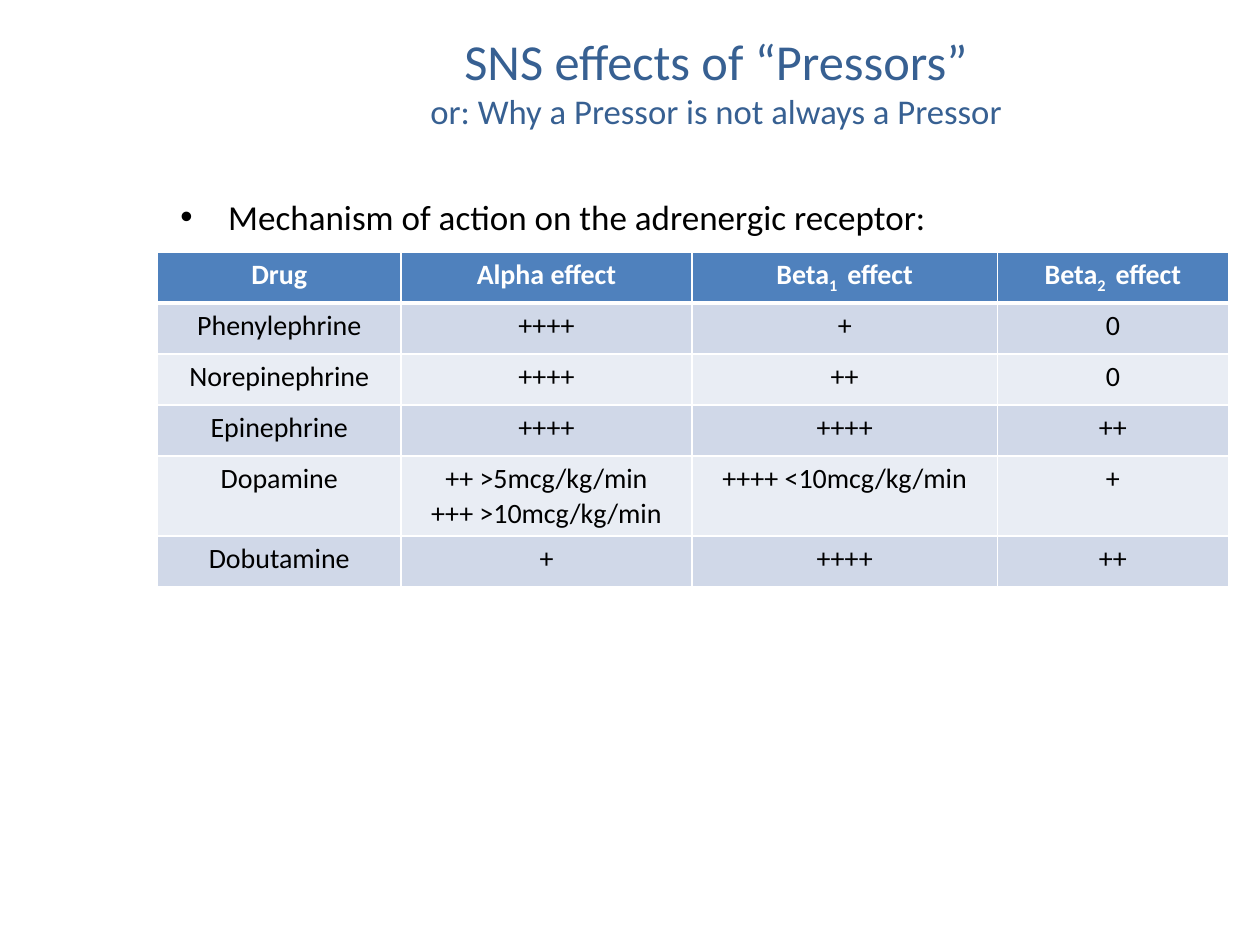
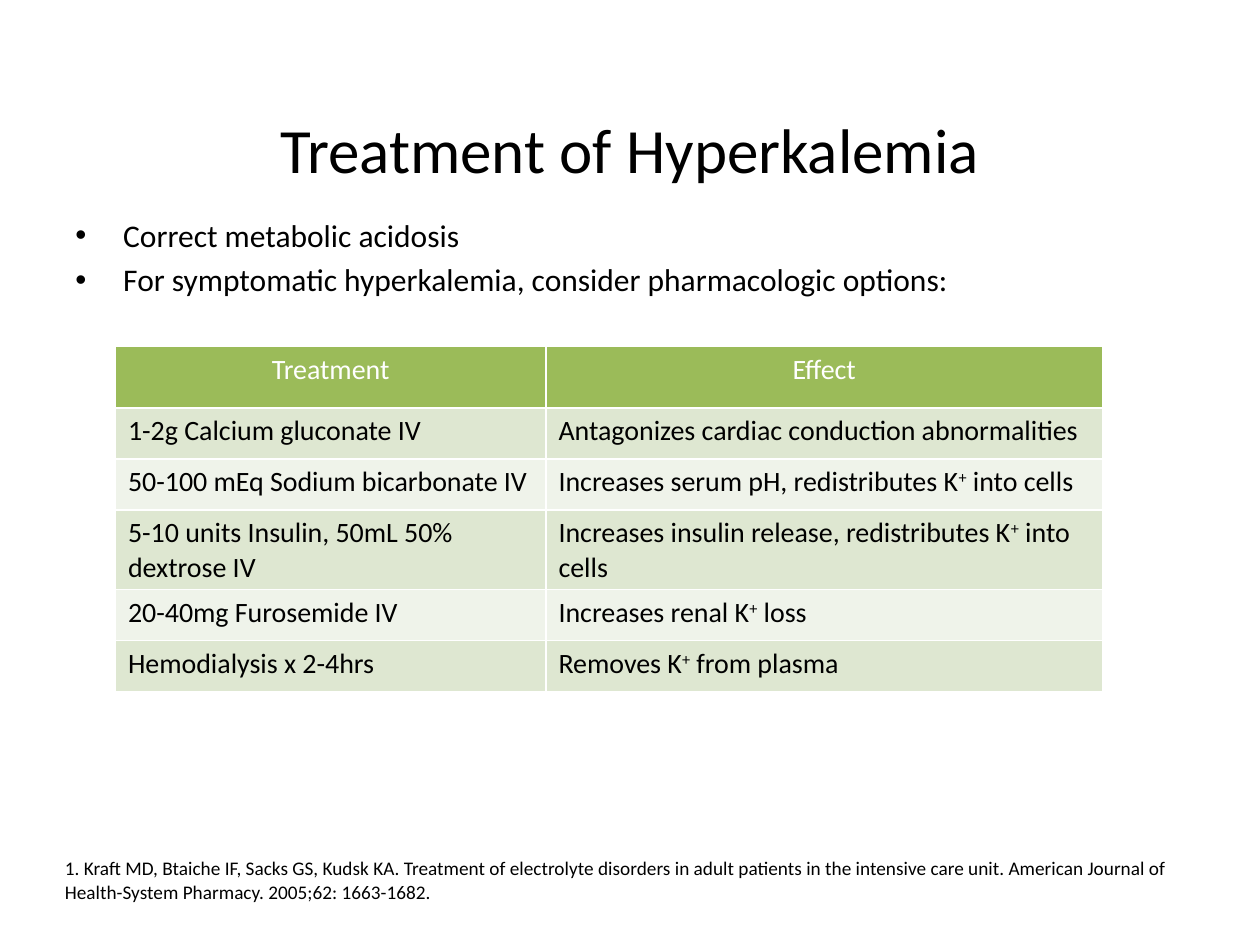
from dataclasses import dataclass
from typing import NamedTuple

from lxml.etree import SubElement
from pptx import Presentation
from pptx.dml.color import RGBColor
from pptx.enum.text import MSO_ANCHOR, PP_ALIGN
from pptx.oxml.ns import qn
from pptx.util import Emu, Inches, Pt

COLUMNS, ROWS = 120, 90
PAGE_WIDTH, PAGE_HEIGHT = Inches(10), Inches(7.5)


@dataclass(frozen=True)
class Theme:
    """Colours and type sizes shared by the slides."""
    font: str = "Calibri"
    ink: str = "000000"
    paper: str = "FFFFFF"
    accent: str = "376092"
    blue: tuple[str, ...] = ("4F81BD", "D0D8E8", "E9EDF4")
    green: tuple[str, ...] = ("9BBB59", "DEE7D1", "EFF3EA")
    title: float = 36
    long_title: float = 28.8
    subtitle: float = 19.8
    lead_point: float = 20
    point: float = 18
    cell: float = 16
    citation: float = 11
    grid_line: float = 1
    heavy_line: float = 3


THEME = Theme()


class Area(NamedTuple):
    """A place on the grid, in columns and rows."""
    left: float
    top: float
    width: float
    height: float


class Span(NamedTuple):
    """A stretch of text with its baseline shift in percent."""
    text: str
    shift: int = 0


class TitleLine(NamedTuple):
    """One line of a title with its type size."""
    text: str
    size: float


Entry = str | tuple[Span, ...]


@dataclass(frozen=True)
class Title:
    """A centred heading."""
    area: Area
    lines: tuple[TitleLine, ...]
    color: str


@dataclass(frozen=True)
class Points:
    """A bulleted list."""
    area: Area
    texts: tuple[str, ...]
    size: float


@dataclass(frozen=True)
class Grid:
    """A table with a coloured heading and banded rows."""
    left: float
    top: float
    widths: tuple[float, ...]
    heading_height: float
    row_height: float
    palette: tuple[str, ...]
    entries: tuple[tuple[Entry, ...], ...]
    bold_heading: bool
    body_align: PP_ALIGN
    heading_rule: float


def across(columns: float) -> Emu:
    """Turn grid columns into a length."""
    return Emu(round(PAGE_WIDTH * columns / COLUMNS))


def down(rows: float) -> Emu:
    """Turn grid rows into a length."""
    return Emu(round(PAGE_HEIGHT * rows / ROWS))


def style(font, size: float, color: str, bold: bool = False) -> None:
    """Set face, size, colour and weight."""
    font.name = THEME.font
    font.size = Pt(size)
    font.bold = bold
    font.color.rgb = RGBColor.from_string(color)


def add_frame(slide, area: Area):
    """Add a wrapping text frame."""
    frame = slide.shapes.add_textbox(across(area.left), down(area.top),
                                     across(area.width), down(area.height)).text_frame
    frame.word_wrap = True
    return frame


def paragraphs(frame, count: int):
    """Return the given number of paragraphs, starting with the first."""
    return [frame.paragraphs[0], *(frame.add_paragraph() for _ in range(count - 1))]


def draw_title(slide, title: Title) -> None:
    """Draw a heading of one or more lines."""
    frame = add_frame(slide, title.area)
    frame.vertical_anchor = MSO_ANCHOR.MIDDLE
    heading = frame.paragraphs[0]
    heading.alignment = PP_ALIGN.CENTER
    for index, line in enumerate(title.lines):
        if index:
            heading.add_line_break()
        run = heading.add_run()
        run.text = line.text
        style(run.font, line.size, title.color)


def draw_points(slide, points: Points) -> None:
    """Draw a bulleted list with hanging indents."""
    frame = add_frame(slide, points.area)
    hang = Inches(0.38)
    for index, (point, text) in enumerate(zip(paragraphs(frame, len(points.texts)), points.texts)):
        point.text = text
        properties = point._p.get_or_add_pPr()
        properties.set("marL", str(hang))
        properties.set("indent", str(-hang))
        SubElement(properties, qn("a:buFont"), typeface="Arial")
        SubElement(properties, qn("a:buChar"), char="•")
        if index:
            point.space_before = Pt(points.size * 0.2)
        style(point.font, points.size, THEME.ink)


def draw_citation(slide, area: Area, text: str) -> None:
    """Draw the reference at the foot of a slide."""
    reference = add_frame(slide, area).paragraphs[0]
    reference.text = text
    style(reference.font, THEME.citation, THEME.ink)


def rule_cell(cell, top: float, bottom: float) -> None:
    """Draw the four borders of a cell."""
    widths = {"lnL": THEME.grid_line, "lnR": THEME.grid_line, "lnT": top, "lnB": bottom}
    for side, width in widths.items():
        border = SubElement(cell._tc.get_or_add_tcPr(), qn(f"a:{side}"), w=str(Pt(width)))
        SubElement(SubElement(border, qn("a:solidFill")), qn("a:srgbClr"), val=THEME.paper)


def fill_cell(cell, entry: Entry, align: PP_ALIGN, color: str, bold: bool) -> None:
    """Write an entry, one paragraph for each line of a string."""
    lines = [(Span(text),) for text in entry.split("\n")] if isinstance(entry, str) else [entry]
    for paragraph, spans in zip(paragraphs(cell.text_frame, len(lines)), lines):
        paragraph.alignment = align
        for span in spans:
            run = paragraph.add_run()
            run.text = span.text
            if span.shift:
                run._r.get_or_add_rPr().set("baseline", str(span.shift * 1000))
        style(paragraph.font, THEME.cell, color, bold)
        for run in paragraph.runs:
            style(run.font, THEME.cell, color, bold)


def draw_grid(slide, grid: Grid) -> None:
    """Draw a table with its bands and rules."""
    count = len(grid.entries)
    height = grid.heading_height + grid.row_height * (count - 1)
    table = slide.shapes.add_table(count, len(grid.widths), across(grid.left), down(grid.top),
                                   across(sum(grid.widths)), down(height)).table
    for column, width in zip(table.columns, grid.widths):
        column.width = across(width)
    heading_fill, *bands = grid.palette
    for row, entries in enumerate(grid.entries):
        heading = row == 0
        table.rows[row].height = down(grid.heading_height if heading else grid.row_height)
        for column, entry in enumerate(entries):
            cell = table.cell(row, column)
            rule_cell(cell, grid.heading_rule if row == 1 else THEME.grid_line,
                      grid.heading_rule if heading else THEME.grid_line)
            cell.fill.solid()
            cell.fill.fore_color.rgb = RGBColor.from_string(
                heading_fill if heading else bands[(row - 1) % len(bands)])
            fill_cell(cell, entry, PP_ALIGN.CENTER if heading else grid.body_align,
                      THEME.paper if heading else THEME.ink, heading and grid.bold_heading)


def beta(number: int) -> tuple[Span, ...]:
    """Name a beta receptor effect with its subscript."""
    return Span("Beta"), Span(f"{number} ", -25), Span(" effect")


def potassium(before: str, after: str) -> tuple[Span, ...]:
    """Write a phrase around the potassium ion."""
    return Span(f"{before} K"), Span("+", 30), Span(f" {after}")


PRESSOR_TITLE = Title(
    Area(19, 3, 98.4, 9.4),
    (TitleLine("SNS effects of “Pressors”", THEME.long_title),
     TitleLine("or: Why a Pressor is not always a Pressor", THEME.subtitle)),
    THEME.accent)
PRESSOR_POINTS = Points(Area(16, 18, 101.3, 64),
                        ("Mechanism of action on the adrenergic receptor:",), THEME.lead_point)
PRESSOR_EFFECTS = Grid(
    15, 24, (23.2, 27.7, 29.1, 22), 4.86, 4.86, THEME.blue,
    (("Drug", "Alpha effect", beta(1), beta(2)),
     ("Phenylephrine", "++++", "+", "0"),
     ("Norepinephrine", "++++", "++", "0"),
     ("Epinephrine", "++++", "++++", "++"),
     ("Dopamine", "++ >5mcg/kg/min\n+++ >10mcg/kg/min", "++++ <10mcg/kg/min", "+"),
     ("Dobutamine", "+", "++++", "++")),
    True, PP_ALIGN.CENTER, THEME.heavy_line)

HYPERKALEMIA_TITLE = Title(Area(6, 9.25, 108, 9.75),
                           (TitleLine("Treatment of Hyperkalemia", THEME.title),), THEME.ink)
HYPERKALEMIA_POINTS = Points(
    Area(6, 20, 108, 61),
    ("Correct metabolic acidosis",
     "For symptomatic hyperkalemia, consider pharmacologic options:"), THEME.point)
HYPERKALEMIA_TREATMENTS = Grid(
    11, 33, (41, 53), 5.84, 4.86, THEME.green,
    (("Treatment", "Effect"),
     ("1-2g Calcium gluconate IV", "Antagonizes cardiac conduction abnormalities"),
     ("50-100 mEq Sodium bicarbonate IV",
      potassium("Increases serum pH, redistributes", "into cells")),
     ("5-10 units Insulin, 50mL 50% dextrose IV",
      potassium("Increases insulin release, redistributes", "into cells")),
     ("20-40mg Furosemide IV", potassium("Increases renal", "loss")),
     ("Hemodialysis x 2-4hrs", potassium("Removes", "from plasma"))),
    False, PP_ALIGN.LEFT, THEME.grid_line)
CITATION = ("1. Kraft MD, Btaiche IF, Sacks GS, Kudsk KA. Treatment of electrolyte disorders in adult "
            "patients in the intensive care unit. American Journal of Health-System Pharmacy. "
            "2005;62: 1663-1682.")


def main() -> None:
    """Build and save the two slides."""
    deck = Presentation()
    deck.slide_width, deck.slide_height = PAGE_WIDTH, PAGE_HEIGHT
    blank = deck.slide_layouts[6]
    for title, points, grid in ((PRESSOR_TITLE, PRESSOR_POINTS, PRESSOR_EFFECTS),
                                (HYPERKALEMIA_TITLE, HYPERKALEMIA_POINTS, HYPERKALEMIA_TREATMENTS)):
        slide = deck.slides.add_slide(blank)
        draw_title(slide, title)
        draw_points(slide, points)
        draw_grid(slide, grid)
    draw_citation(slide, Area(5, 81, 110, 5.6), CITATION)
    deck.save("out.pptx")


if __name__ == "__main__":
    main()
